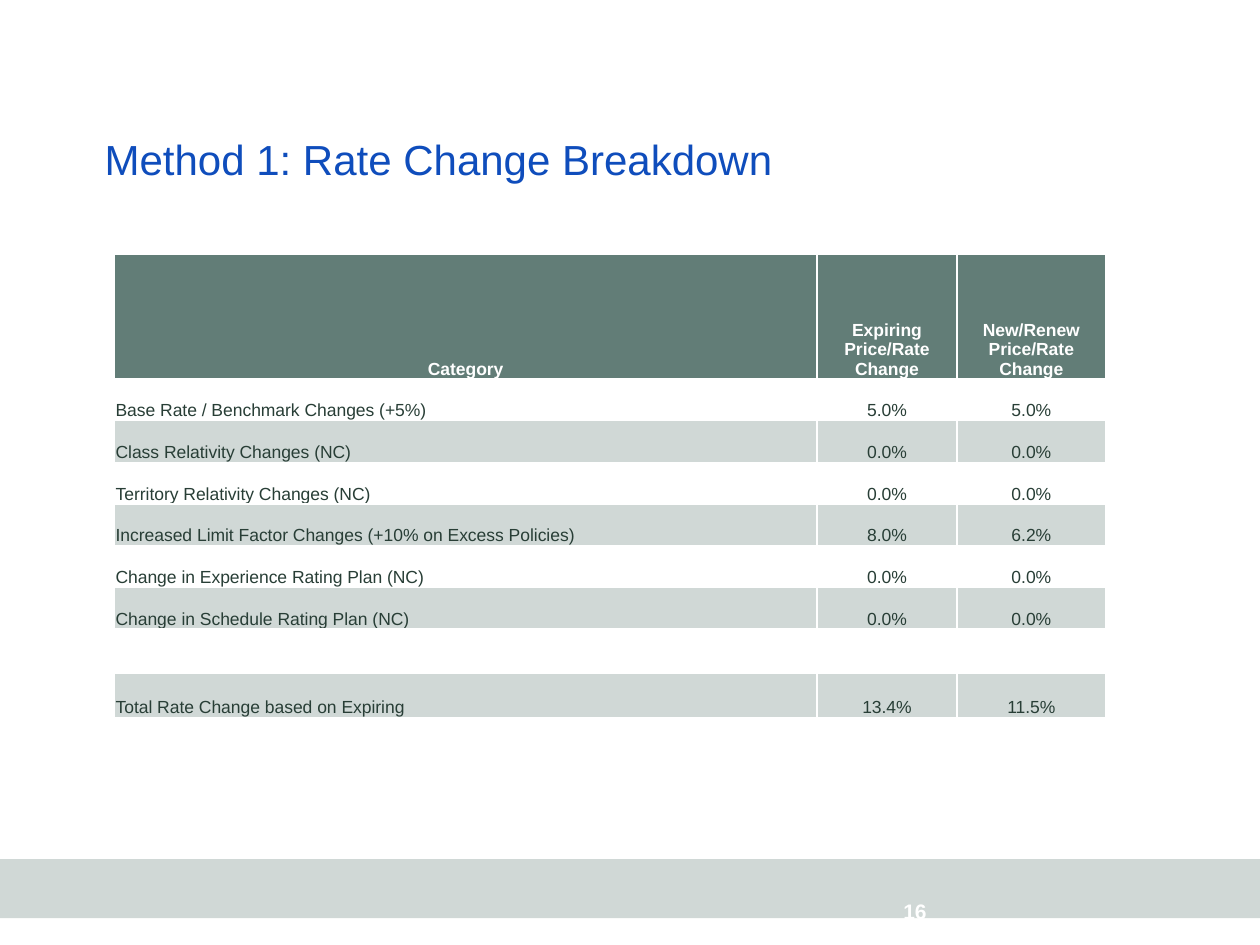
import pptx
import pptx.dml.color
import pptx.enum.shapes
import pptx.enum.text
import pptx.util

Cm = pptx.util.Cm
RGBColor = pptx.dml.color.RGBColor
ALIGN = pptx.enum.text.PP_ALIGN
ANCHOR = pptx.enum.text.MSO_ANCHOR

WHITE = RGBColor(0xFF, 0xFF, 0xFF)
BLUE = RGBColor(0x0F, 0x4D, 0xBC)
DARK_GREEN = RGBColor(0x28, 0x3E, 0x36)
HEADER_GREEN = RGBColor(0x62, 0x7D, 0x77)
PALE_GREEN = RGBColor(0xD0, 0xD8, 0xD6)

COLUMN_WIDTHS = (14.17, 2.82, 3)
ROW_HEIGHTS = (2.52,) + (0.84,) * 6 + (0.89,) * 2
RATE_CHANGES = (
    ("Category", "Expiring Price/Rate Change", "New/Renew Price/Rate Change"),
    ("Base Rate / Benchmark Changes (+5%)", "5.0%", "5.0%"),
    ("Class Relativity Changes (NC)", "0.0%", "0.0%"),
    ("Territory Relativity Changes (NC)", "0.0%", "0.0%"),
    ("Increased Limit Factor Changes (+10% on Excess Policies)", "8.0%", "6.2%"),
    ("Change in Experience Rating Plan (NC)", "0.0%", "0.0%"),
    ("Change in Schedule Rating Plan (NC)", "0.0%", "0.0%"),
    ("", "", ""),
    ("Total Rate Change based on Expiring", "13.4%", "11.5%"),
)


def write_text(frame, text, size=10, color=DARK_GREEN, bold=False,
               align=ALIGN.LEFT, line_spacing=None):
    paragraph = frame.paragraphs[0]
    paragraph.alignment = align
    paragraph.line_spacing = line_spacing
    run = paragraph.add_run()
    run.text = text
    run.font.name = "Arial"
    run.font.size = pptx.util.Pt(size)
    run.font.bold = bold
    run.font.color.rgb = color


def add_label(slide, text, left, top, width, height, **text_format):
    label = slide.shapes.add_textbox(Cm(left), Cm(top), Cm(width), Cm(height))
    frame = label.text_frame
    frame.word_wrap = True
    frame.vertical_anchor = ANCHOR.BOTTOM
    frame.margin_left = frame.margin_right = 0
    frame.margin_top = frame.margin_bottom = 0
    write_text(frame, text, **text_format)


def add_footer_band(slide):
    band = slide.shapes.add_shape(pptx.enum.shapes.MSO_SHAPE.RECTANGLE,
                                  0, Cm(17.32), Cm(25.4), Cm(1.19))
    band.shadow.inherit = False
    band.fill.solid()
    band.fill.fore_color.rgb = PALE_GREEN
    band.line.fill.background()


def fill_cell(cell, text, row, column):
    is_header = row == 0
    cell.vertical_anchor = ANCHOR.BOTTOM
    cell.margin_left = cell.margin_right = cell.margin_top = Cm(0.03)
    cell.margin_bottom = 0

    # Header is dark, every second row below it is pale
    if is_header or row % 2 == 0:
        cell.fill.solid()
        cell.fill.fore_color.rgb = HEADER_GREEN if is_header else PALE_GREEN
    else:
        cell.fill.background()

    write_text(cell.text_frame, text, bold=is_header,
               color=WHITE if is_header else DARK_GREEN,
               align=ALIGN.CENTER if is_header or column else ALIGN.LEFT)


def add_rate_table(slide):
    table = slide.shapes.add_table(
        len(ROW_HEIGHTS), len(COLUMN_WIDTHS), Cm(2.3), Cm(5.12),
        Cm(sum(COLUMN_WIDTHS)), Cm(sum(ROW_HEIGHTS))).table
    table.first_row = table.horz_banding = False
    for column, width in zip(table.columns, COLUMN_WIDTHS):
        column.width = Cm(width)
    for row, height in zip(table.rows, ROW_HEIGHTS):
        row.height = Cm(height)
    for row, values in enumerate(RATE_CHANGES):
        for column, text in enumerate(values):
            fill_cell(table.cell(row, column), text, row, column)


def main():
    presentation = pptx.Presentation()
    presentation.slide_width = Cm(25.4)
    presentation.slide_height = Cm(19.05)
    slide = presentation.slides.add_slide(presentation.slide_layouts[6])

    # Footer with page number
    add_footer_band(slide)
    add_label(slide, "16", 18.21, 17.35, 5.92, 1.27,
              size=12, color=WHITE, bold=True)

    # Title and table
    add_label(slide, "Method 1: Rate Change Breakdown", 2.11, 1.32, 16.2, 2.41,
              size=24, color=BLUE, line_spacing=0.9)
    add_rate_table(slide)

    presentation.save("out.pptx")


if __name__ == "__main__":
    main()
